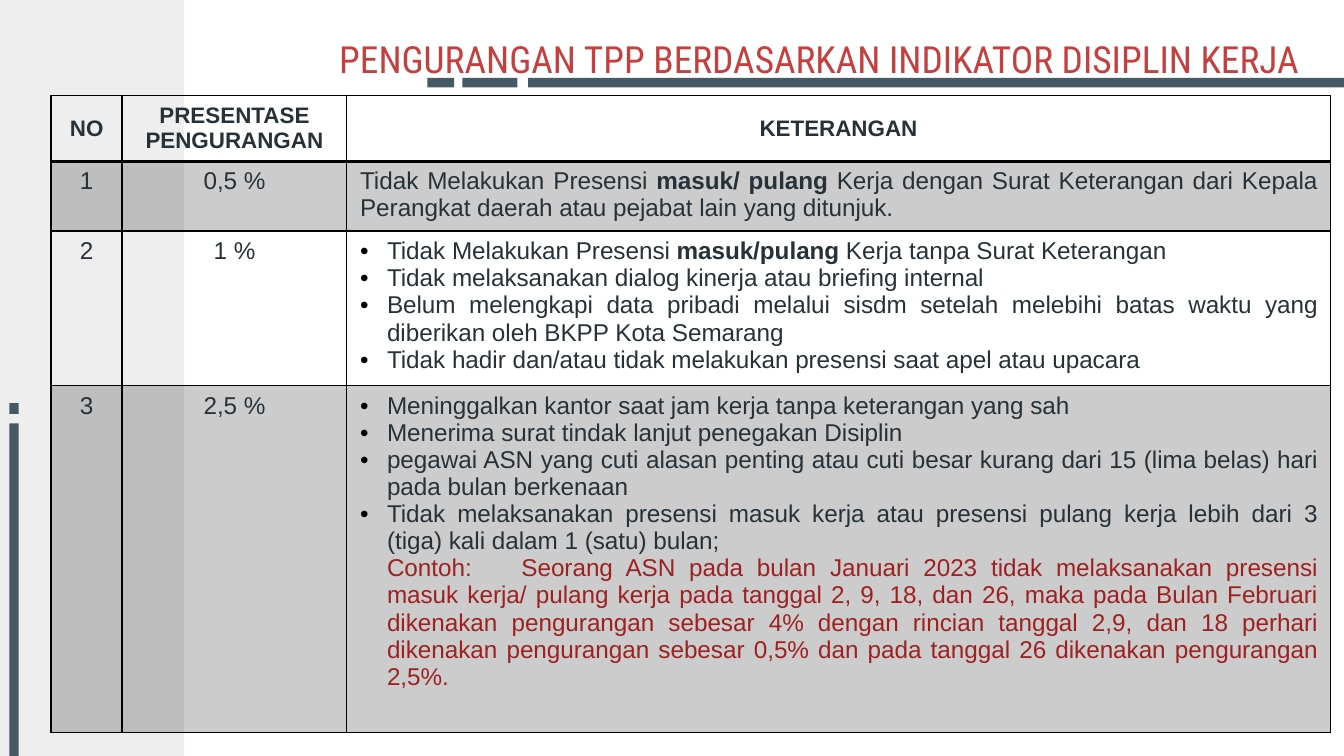
"""Build the slide on TPP deductions by work discipline indicator."""
from lxml import etree
from pptx import Presentation
from pptx.dml.color import RGBColor
from pptx.enum.shapes import MSO_SHAPE
from pptx.enum.text import MSO_ANCHOR, MSO_AUTO_SIZE, PP_ALIGN
from pptx.oxml.ns import qn
from pptx.util import Inches, Pt

RECT = MSO_SHAPE.RECTANGLE
TOP, MIDDLE = MSO_ANCHOR.TOP, MSO_ANCHOR.MIDDLE
CENTER, RIGHT, JUSTIFY = PP_ALIGN.CENTER, PP_ALIGN.RIGHT, PP_ALIGN.JUSTIFY
FIXED = MSO_AUTO_SIZE.NONE

COLORS = {"pale": "EEEEEE", "slate": "455A64", "title": "C53F3F",
          "text": "263238", "sample": "9E2121", "black": "000000"}
TITLE = "PENGURANGAN TPP BERDASARKAN INDIKATOR DISIPLIN KERJA"
HEADS = [["NO"], ["PRESENTASE", "PENGURANGAN"], ["KETERANGAN"]]
ROWS = [
    ("1", "0,5 %", "plain", [
        "Tidak Melakukan Presensi *masuk/ pulang *Kerja dengan Surat Keterangan "
        "dari Kepala Perangkat daerah atau pejabat lain yang ditunjuk."], []),
    ("2", "1 %", "bullet", [
        "Tidak Melakukan Presensi *masuk/pulang *Kerja tanpa Surat Keterangan ",
        "Tidak melaksanakan dialog kinerja atau briefing internal",
        "Belum melengkapi data pribadi melalui sisdm setelah melebihi batas "
        "waktu yang diberikan oleh BKPP Kota Semarang",
        "Tidak hadir dan/atau tidak melakukan presensi saat apel atau upacara"], []),
    ("3", "2,5 %", "bullet", [
        "Meninggalkan kantor saat jam kerja tanpa keterangan yang sah",
        "Menerima surat tindak lanjut penegakan Disiplin",
        "pegawai ASN yang cuti alasan penting atau cuti besar kurang dari 15 "
        "(lima belas) hari pada bulan berkenaan",
        "Tidak melaksanakan presensi masuk kerja atau presensi pulang kerja "
        "lebih dari 3 (tiga) kali dalam 1 (satu) bulan;"], [
        "Contoh:\tSeorang ASN pada bulan Januari 2023 tidak melaksanakan presensi "
        "masuk kerja/ pulang kerja pada tanggal 2, 9, 18, dan 26, maka pada Bulan "
        "Februari dikenakan pengurangan sebesar 4% dengan rincian tanggal 2,9, dan "
        "18 perhari dikenakan pengurangan sebesar 0,5% dan pada tanggal 26 "
        "dikenakan pengurangan 2,5%."]),
]
WIDTHS = [0.53, 1.67, 7.32]
HEIGHTS = [0.49, 0.52, 1.15, 2.58]
BAR = 0.07
BLOCKS = [("pale", -0.21, -0.08, 1.58, 5.78)]
BLOCKS += [("slate", left, 0.58, width, BAR)
           for left, width in [(3.93, 6.22), (3.44, 0.41), (3.18, 0.2)]]
BLOCKS += [("slate", 0.07, top, BAR, height)
           for top, height in [(3.15, 5.53), (3, 0.08)]]


def rgb(name):
    """Return a named colour."""
    return RGBColor.from_string(COLORS[name])


def write(frame, lines, size=13, font="Arial", color="text", bold=False,
          align=CENTER, kind="plain", space=None, more=False):
    """Fill a text frame; parts between asterisks turn bold."""
    for i, line in enumerate(lines):
        para = frame.add_paragraph() if i or more else frame.paragraphs[0]
        para.alignment = align
        if space:
            para.line_spacing = space
        props = para._p.get_or_add_pPr()
        if kind != "plain":
            props.set("marL", str(Inches(0.2)))
            props.set("indent", str(Inches(-0.2 if kind == "bullet" else 0)))
        if kind == "bullet":
            tint = etree.SubElement(props, qn("a:buClr"))
            etree.SubElement(tint, qn("a:srgbClr"), val=COLORS["black"])
            etree.SubElement(props, qn("a:buFont"), typeface="Arial")
            etree.SubElement(props, qn("a:buChar"), char="•")
        for j, part in enumerate(line.split("*")):
            run = para.add_run()
            run.text = part
            run.font.name, run.font.size = font, Pt(size)
            run.font.bold = bold or j % 2 == 1
            run.font.color.rgb = rgb(color)


def style(cell, row):
    """Set the borders and fill of a cell."""
    props = cell._tc.get_or_add_tcPr()
    for side in "LRTB":
        thick = (side, row) in [("B", 0), ("T", 1)]
        line = etree.SubElement(props, qn("a:ln" + side), w=str(Pt(2 if thick else 1)))
        fill = etree.SubElement(line, qn("a:solidFill"))
        etree.SubElement(fill, qn("a:srgbClr"), val=COLORS["black"])
    if row % 2:
        cell.fill.solid()
        cell.fill.fore_color.rgb = rgb("black")
        shade = props.find(qn("a:solidFill"))[0]
        etree.SubElement(shade, qn("a:alpha"), val="20000")
    else:
        cell.fill.background()
    cell.vertical_anchor = TOP if row else MIDDLE


def main():
    """Place the blocks, the title and the table."""
    deck = Presentation()
    deck.slide_width = Inches(10)
    deck.slide_height = deck.slide_width * 9 // 16
    slide = deck.slides.add_slide(deck.slide_layouts[5])
    shapes = slide.shapes

    for color, *box in BLOCKS:
        block = shapes.add_shape(RECT, *map(Inches, box))
        block.shadow.inherit = False
        block.fill.solid()
        block.fill.fore_color.rgb = rgb(color)
        block.line.fill.background()

    title = shapes.title
    shapes._spTree.append(title._element)
    title.left, title.top = Inches(2.26), Inches(0)
    title.width, title.height = Inches(7.51), Inches(0.7)
    frame = title.text_frame
    frame.auto_size, frame.vertical_anchor, frame.word_wrap = FIXED, TOP, True
    frame.margin_left = frame.margin_right = Inches(0.1)
    frame.margin_top = frame.margin_bottom = Inches(0.1)
    write(frame, [TITLE], size=20, font="Roboto Condensed", color="title",
          align=RIGHT, space=1.5)

    table = shapes.add_table(len(HEIGHTS), len(WIDTHS), Inches(0.38), Inches(0.71),
                             Inches(sum(WIDTHS)), Inches(sum(HEIGHTS))).table
    table.first_row = table.horz_banding = False
    for column, width in zip(table.columns, WIDTHS):
        column.width = Inches(width)
    for i, height in enumerate(HEIGHTS):
        table.rows[i].height = Inches(height)
        for cell in table.rows[i].cells:
            style(cell, i)
    for cell, head in zip(table.rows[0].cells, HEADS):
        write(cell.text_frame, head, size=12, bold=True)
    for i, (number, share, kind, notes, sample) in enumerate(ROWS, 1):
        first, second, third = [cell.text_frame for cell in table.rows[i].cells]
        write(first, [number])
        write(second, [share])
        write(third, notes, align=JUSTIFY, kind=kind)
        write(third, sample, color="sample", align=JUSTIFY, kind="inset", more=True)

    deck.save("out.pptx")


if __name__ == "__main__":
    main()
